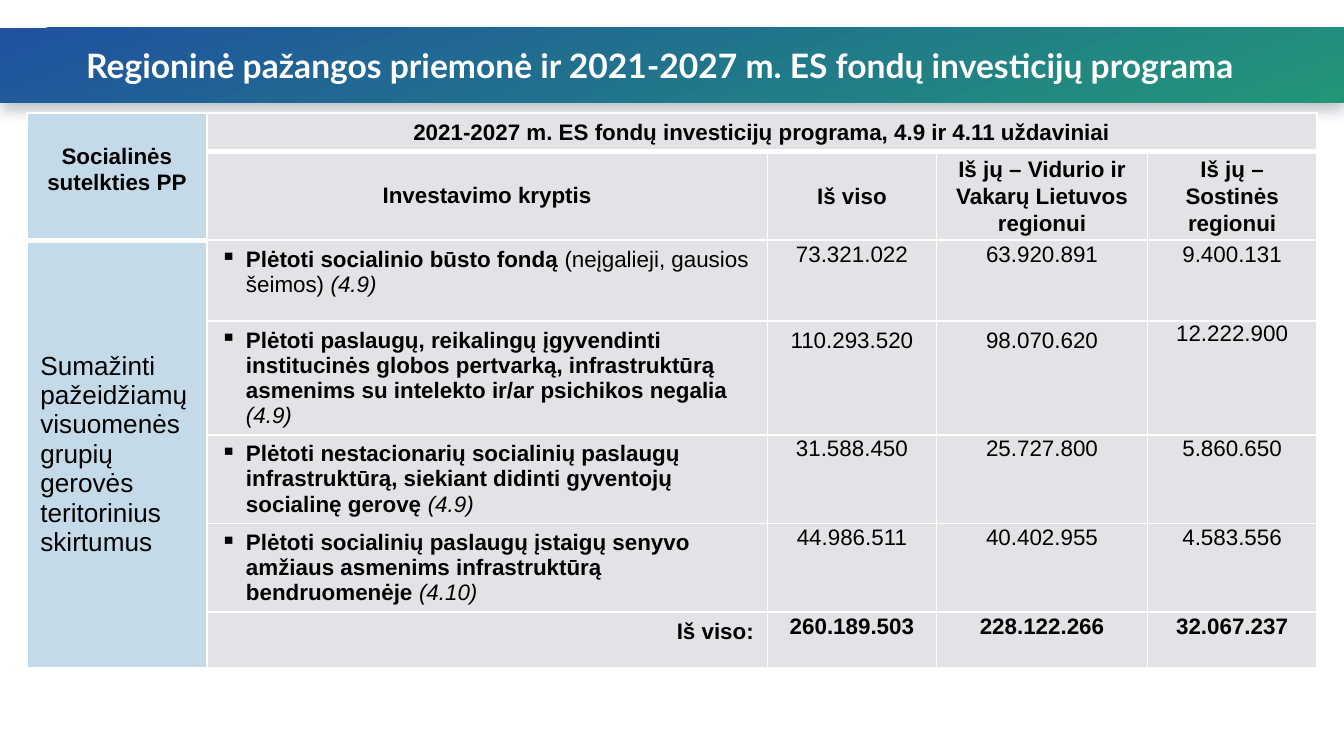
from lxml import etree
from pptx import Presentation
from pptx.dml.color import RGBColor
from pptx.enum.shapes import MSO_SHAPE
from pptx.enum.text import MSO_ANCHOR, PP_ALIGN
from pptx.oxml import parse_xml
from pptx.oxml.ns import nsdecls, qn
from pptx.util import Pt

RECTANGLE = MSO_SHAPE.RECTANGLE
TOP, MIDDLE = MSO_ANCHOR.TOP, MSO_ANCHOR.MIDDLE
LEFT, CENTER, RIGHT = PP_ALIGN.LEFT, PP_ALIGN.CENTER, PP_ALIGN.RIGHT

BLUE, GRAY, WHITE, BLACK = "C5DAE9", "E2E3E6", "FFFFFF", "000000"


def color(value):
    return RGBColor.from_string(value)


def write_cell(cell, parts, alignment=CENTER, anchor=TOP, top=3.6, side=7.2,
               size=12, spacing=None, bullet=False):
    cell.vertical_anchor = anchor
    cell.margin_left = cell.margin_right = Pt(side)
    cell.margin_top = Pt(top)
    cell.margin_bottom = Pt(min(top, 3.6))
    paragraph = cell.text_frame.paragraphs[0]
    paragraph.alignment = alignment
    if spacing:
        paragraph.line_spacing = spacing
    if bullet:
        properties = paragraph._p.get_or_add_pPr()
        properties.set("marL", str(Pt(13.7)))
        properties.set("indent", str(-Pt(13.7)))
        etree.SubElement(properties, qn("a:buChar")).set("char", "▪")
    for text, style in parts:
        run = paragraph.add_run()
        run.text = text
        run.font.name = "Arial"
        run.font.size = Pt(size)
        run.font.bold = style == "bold"
        run.font.italic = style == "italic"
        run.font.color.rgb = color(BLACK)


presentation = Presentation()
presentation.slide_width = Pt(720)
presentation.slide_height = Pt(405)
slide = presentation.slides.add_slide(presentation.slide_layouts[6])

banner = slide.shapes.add_shape(RECTANGLE, 0, Pt(15), Pt(720), Pt(40))
banner.line.fill.background()
banner.fill.gradient()
banner.fill.gradient_angle = 290
for stop, position, value in zip(banner.fill.gradient_stops, (0, 1), ("2052A0", "229678")):
    stop.position = position
    stop.color.rgb = color(value)
banner._element.spPr.append(parse_xml(
    f'<a:effectLst {nsdecls("a")}>'
    f'<a:outerShdw blurRad="{Pt(8)}" dist="{Pt(4)}" dir="5400000" algn="t" rotWithShape="0">'
    '<a:srgbClr val="1F3B50"><a:alpha val="30000"/></a:srgbClr>'
    '</a:outerShdw></a:effectLst>'))
title_frame = banner.text_frame
title_frame.word_wrap = True
title_frame.vertical_anchor = MIDDLE
title_frame.margin_right = Pt(20)
title_frame.text = "Regioninė pažangos priemonė ir 2021-2027 m. ES fondų investicijų programa"
title = title_frame.paragraphs[0]
title.alignment = CENTER
title_font = title.runs[0].font
title_font.name = "Lato"
title_font.size = Pt(18)
title_font.bold = True
title_font.color.rgb = color(WHITE)

column_widths = [96.5, 300.2, 90.7, 113, 90.7]
row_heights = [20.7, 47.5, 43.3, 61, 47.5, 47.5, 30]
table = slide.shapes.add_table(len(row_heights), len(column_widths), Pt(14.4), Pt(60.5),
                               Pt(sum(column_widths)), Pt(sum(row_heights))).table
for column, width in zip(table.columns, column_widths):
    column.width = Pt(width)
for row, height in zip(table.rows, row_heights):
    row.height = Pt(height)

for row_index in range(len(row_heights)):
    for column_index in range(len(column_widths)):
        cell = table.cell(row_index, column_index)
        cell.fill.solid()
        cell.fill.fore_color.rgb = color(GRAY if column_index else BLUE)
        thick_row = 0 if column_index else 1
        widths = {"lnL": 1, "lnR": 1,
                  "lnT": 3 if row_index == thick_row + 1 else 1,
                  "lnB": 3 if row_index == thick_row else 1}
        for index, (side, width) in enumerate(widths.items()):
            cell._tc.get_or_add_tcPr().insert(index, parse_xml(
                f'<a:{side} {nsdecls("a")} w="{Pt(width)}"><a:solidFill>'
                f'<a:srgbClr val="{WHITE}"/></a:solidFill></a:{side}>'))

table.cell(0, 0).merge(table.cell(1, 0))
table.cell(0, 1).merge(table.cell(0, 4))
table.cell(2, 0).merge(table.cell(6, 0))

write_cell(table.cell(0, 0), [("Socialinės sutelkties PP", "bold")], top=17)
write_cell(table.cell(0, 1),
           [("2021-2027 m. ES fondų investicijų programa, 4.9 ir 4.11 uždaviniai", "bold")])
write_cell(table.cell(1, 1), [("Investavimo kryptis", "bold")], top=17)
headings = ["Iš viso", "Iš jų – Vidurio ir Vakarų Lietuvos regionui", "Iš jų – Sostinės regionui"]
for column_index, heading in enumerate(headings, 2):
    write_cell(table.cell(1, column_index), [(heading, "bold")], anchor=MIDDLE,
               top=0, side=5, spacing=1.07)
write_cell(table.cell(2, 0),
           [("Sumažinti pažeidžiamų visuomenės grupių gerovės teritorinius skirtumus", "")],
           alignment=LEFT, anchor=MIDDLE, size=14)

directions = [
    ([("Plėtoti socialinio būsto fondą ", "bold"), ("(neįgalieji, gausios šeimos) ", ""),
      ("(4.9)", "italic")],
     ["73.321.022", "63.920.891", "9.400.131"]),
    ([("Plėtoti paslaugų, reikalingų įgyvendinti institucinės globos pertvarką, "
       "infrastruktūrą asmenims su intelekto ir/ar psichikos negalia ", "bold"),
      ("(4.9)", "italic")],
     ["110.293.520", "98.070.620", "12.222.900"]),
    ([("Plėtoti nestacionarių socialinių paslaugų infrastruktūrą, siekiant didinti "
       "gyventojų socialinę gerovę ", "bold"), ("(4.9)", "italic")],
     ["31.588.450", "25.727.800", "5.860.650"]),
    ([("Plėtoti socialinių paslaugų įstaigų senyvo amžiaus asmenims infrastruktūrą "
       "bendruomenėje ", "bold"), ("(4.10)", "italic")],
     ["44.986.511", "40.402.955", "4.583.556"]),
    ([("Iš viso:", "bold")], ["260.189.503", "228.122.266", "32.067.237"]),
]
for row_index, (parts, amounts) in enumerate(directions, 2):
    is_total = row_index == 6
    write_cell(table.cell(row_index, 1), parts, alignment=RIGHT if is_total else LEFT,
               bullet=not is_total)
    for column_index, amount in enumerate(amounts, 2):
        lowered = row_index == 3 and column_index < 4
        write_cell(table.cell(row_index, column_index), [(amount, "bold" if is_total else "")],
                   top=3.6 if lowered else 0, side=5,
                   spacing=None if row_index == 3 else 1.07)

presentation.save("out.pptx")
